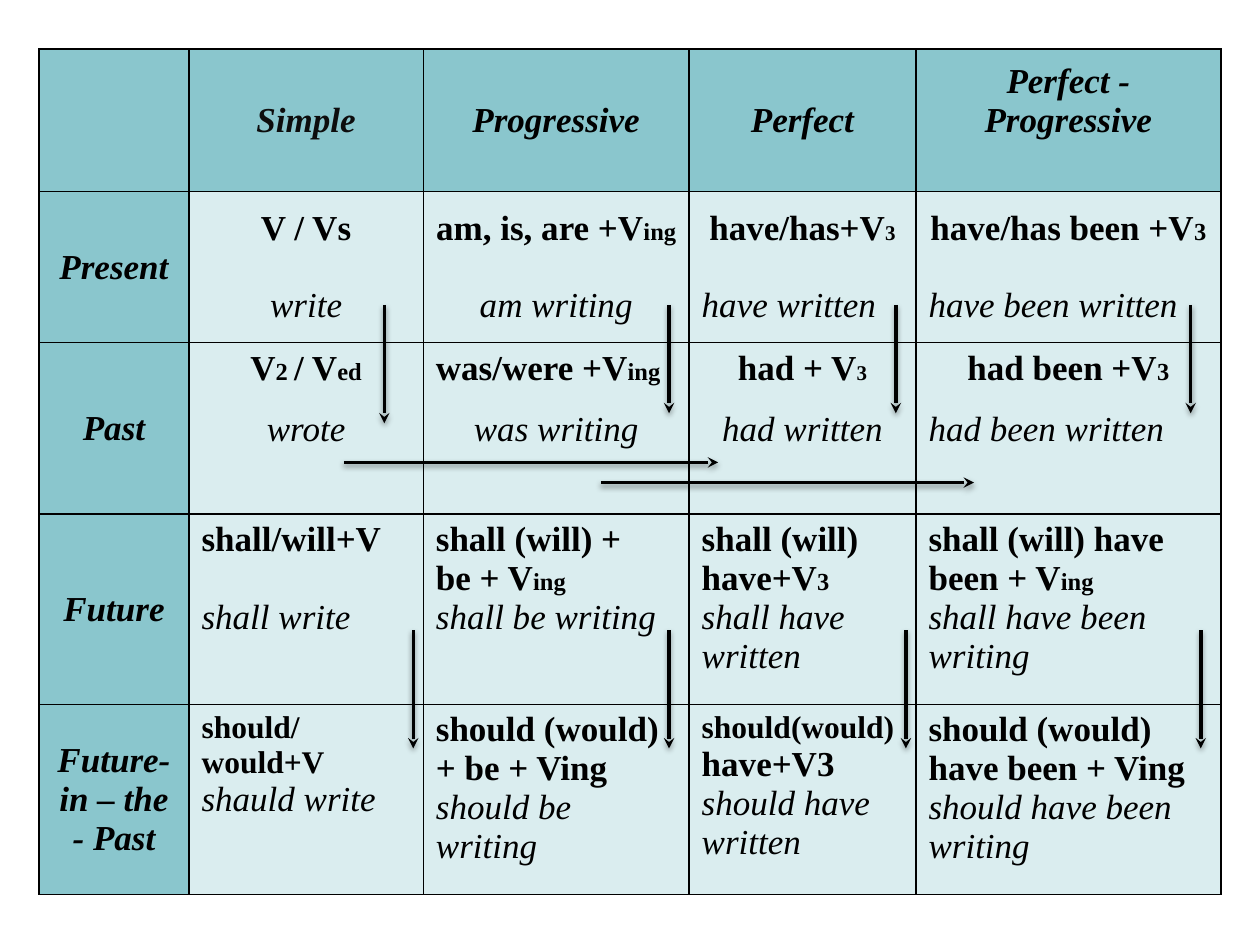
"""Build a slide with a table of English verb tenses and the shifts between them."""
from dataclasses import dataclass

from lxml.etree import SubElement
from pptx import Presentation
from pptx.dml.color import RGBColor
from pptx.enum.shapes import MSO_CONNECTOR as Connector
from pptx.enum.text import MSO_ANCHOR as Anchor, PP_ALIGN as Align
from pptx.oxml import parse_xml
from pptx.oxml.ns import nsdecls, qn
from pptx.util import Inches, Pt

BLACK = RGBColor(0x00, 0x00, 0x00)
SOFT_BLACK = RGBColor(0x0D, 0x0D, 0x0D)
TEAL = RGBColor(0x8A, 0xC6, 0xCD)
PALE_TEAL = RGBColor(0xDA, 0xED, 0xEF)
FONT = "Times New Roman"
BASE_SIZE = 20


@dataclass(frozen=True)
class Run:
    text: str
    size: int = BASE_SIZE
    ends_line: bool = False


@dataclass(frozen=True)
class Form:
    formula: tuple[Run, ...]
    example: str
    formula_align: Align = Align.LEFT
    example_align: Align = Align.LEFT
    gap: int = 0


@dataclass(frozen=True)
class Tense:
    name: str
    height: float
    forms: tuple[Form, ...]
    anchor: Anchor = Anchor.TOP


@dataclass(frozen=True)
class Arrow:
    x1: float
    y1: float
    x2: float
    y2: float


LEFT, TOP = 0.31, 0.39
HEADER_HEIGHT = 1.13
COLUMN_WIDTHS = (1.19, 1.86, 2.11, 1.8, 2.42)
ASPECTS = ("Simple", "Progressive", "Perfect", "Perfect - Progressive")
MID, START = Align.CENTER, Align.LEFT

TENSES = (
    Tense("Present", 1.2, (
        Form((Run("V / Vs"),), "write", MID, MID, 22),
        Form((Run("am, is, are +V"), Run("ing", 14)), "am writing", MID, MID, 22),
        Form((Run("have/has+V"), Run("3", 12)), "have written", MID, START, 22),
        Form((Run("have/has been +V"), Run("3", 14)), "have been written", MID, START, 22),
    ), Anchor.MIDDLE),
    Tense("Past", 1.36, (
        Form((Run("V"), Run("2 ", 14), Run("/ V"), Run("ed", 14)), "wrote", MID, MID, 13),
        Form((Run("was/were +V"), Run("ing", 14)), "was writing", START, MID, 13),
        Form((Run("had + V"), Run("3", 12)), "had written", MID, MID, 13),
        Form((Run("had been +V"), Run("3", 14)), "had been written", MID, START, 13),
    )),
    Tense("Future", 1.51, (
        Form((Run("shall/will+V"),), "shall write", gap=22),
        Form((Run("shall (will) +", ends_line=True), Run("be + V"), Run("ing", 14)),
             "shall be writing"),
        Form((Run("shall (will) have+V"), Run("3", 14)), "shall have written"),
        Form((Run("shall (will) have been + V"), Run("ing", 14)), "shall have been writing"),
    )),
    Tense("Future- in – the - Past", 1.51, (
        Form((Run("should/would+V", 18),), "shauld write"),
        Form((Run("should (would) + be + Ving"),), "should be writing"),
        Form((Run("should(would) ", 18), Run("have+V3")), "should have written"),
        Form((Run("should (would) have been + Ving"),), "should have been writing"),
    )),
)

ARROWS = (
    Arrow(3.05, 2.42, 3.05, 3.36),
    *(Arrow(x, 2.42, x, 3.28) for x in (5.31, 7.11, 9.45)),
    *(Arrow(x, 5, x, 5.94) for x in (3.28, 5.31, 7.19, 9.53)),
    Arrow(2.73, 3.67, 5.7, 3.67),
    Arrow(4.77, 3.83, 7.73, 3.83),
)


def style_cell(cell, fill: RGBColor, anchor: Anchor) -> None:
    cell.fill.solid()
    cell.fill.fore_color.rgb = fill
    cell.vertical_anchor = anchor
    properties = cell._tc.get_or_add_tcPr()
    for index, side in enumerate("LRTB"):
        properties.insert(index, parse_xml(
            f'<a:ln{side} {nsdecls("a")} w="{Pt(1)}"><a:solidFill>'
            f'<a:srgbClr val="{BLACK}"/></a:solidFill></a:ln{side}>'))


def write_paragraph(paragraph, runs: tuple[Run, ...], align: Align, bold: bool,
                    italic: bool, color: RGBColor = BLACK) -> None:
    paragraph.alignment = align
    font = paragraph.font
    font.name, font.size = FONT, Pt(runs[0].size)
    font.bold, font.italic = bold, italic
    font.color.rgb = color
    for part in runs:
        run = paragraph.add_run()
        run.text = part.text
        if part.size != runs[0].size:
            run.font.size = Pt(part.size)
        if part.ends_line:
            paragraph.add_line_break()


def write_heading(cell, text: str, color: RGBColor = BLACK) -> None:
    style_cell(cell, TEAL, Anchor.MIDDLE)
    if text:
        write_paragraph(cell.text_frame.paragraphs[0], (Run(text),), MID, True, True, color)


def write_form(cell, form: Form, anchor: Anchor) -> None:
    style_cell(cell, PALE_TEAL, anchor)
    frame = cell.text_frame
    write_paragraph(frame.paragraphs[0], form.formula, form.formula_align, True, False)
    example = frame.add_paragraph()
    write_paragraph(example, (Run(form.example),), form.example_align, False, True)
    example.space_before = Pt(form.gap)


def add_tense_table(slide) -> None:
    heights = (HEADER_HEIGHT, *(tense.height for tense in TENSES))
    table = slide.shapes.add_table(
        len(heights), len(COLUMN_WIDTHS), Inches(LEFT), Inches(TOP),
        Inches(sum(COLUMN_WIDTHS)), Inches(sum(heights))).table
    table.first_row = table.horz_banding = False
    for column, width in zip(table.columns, COLUMN_WIDTHS):
        column.width = Inches(width)
    for row, height in zip(table.rows, heights):
        row.height = Inches(height)
    for column, aspect in enumerate(("", *ASPECTS)):
        write_heading(table.cell(0, column), aspect, SOFT_BLACK if column == 1 else BLACK)
    table.cell(0, len(ASPECTS)).margin_bottom = Inches(0.36)
    for row, tense in enumerate(TENSES, 1):
        write_heading(table.cell(row, 0), tense.name)
        for column, form in enumerate(tense.forms, 1):
            write_form(table.cell(row, column), form, tense.anchor)


def add_arrow(slide, arrow: Arrow) -> None:
    shift = slide.shapes.add_connector(
        Connector.STRAIGHT, Inches(arrow.x1), Inches(arrow.y1),
        Inches(arrow.x2), Inches(arrow.y2))
    shift.line.color.rgb = BLACK
    shift.line.width = Pt(2)
    SubElement(shift.line._get_or_add_ln(), qn("a:tailEnd"), type="stealth")
    shift._element.spPr.append(parse_xml(
        f'<a:effectLst {nsdecls("a")}><a:outerShdw blurRad="{Pt(3.1)}" dist="{Pt(1.6)}" '
        f'dir="5400000" rotWithShape="0"><a:srgbClr val="{BLACK}">'
        '<a:alpha val="38000"/></a:srgbClr></a:outerShdw></a:effectLst>'))


def main() -> None:
    deck = Presentation()
    deck.slide_width, deck.slide_height = Inches(10), Inches(7.5)
    slide = deck.slides.add_slide(deck.slide_layouts[6])
    add_tense_table(slide)
    for arrow in ARROWS:
        add_arrow(slide, arrow)
    deck.save("out.pptx")


if __name__ == "__main__":
    main()
